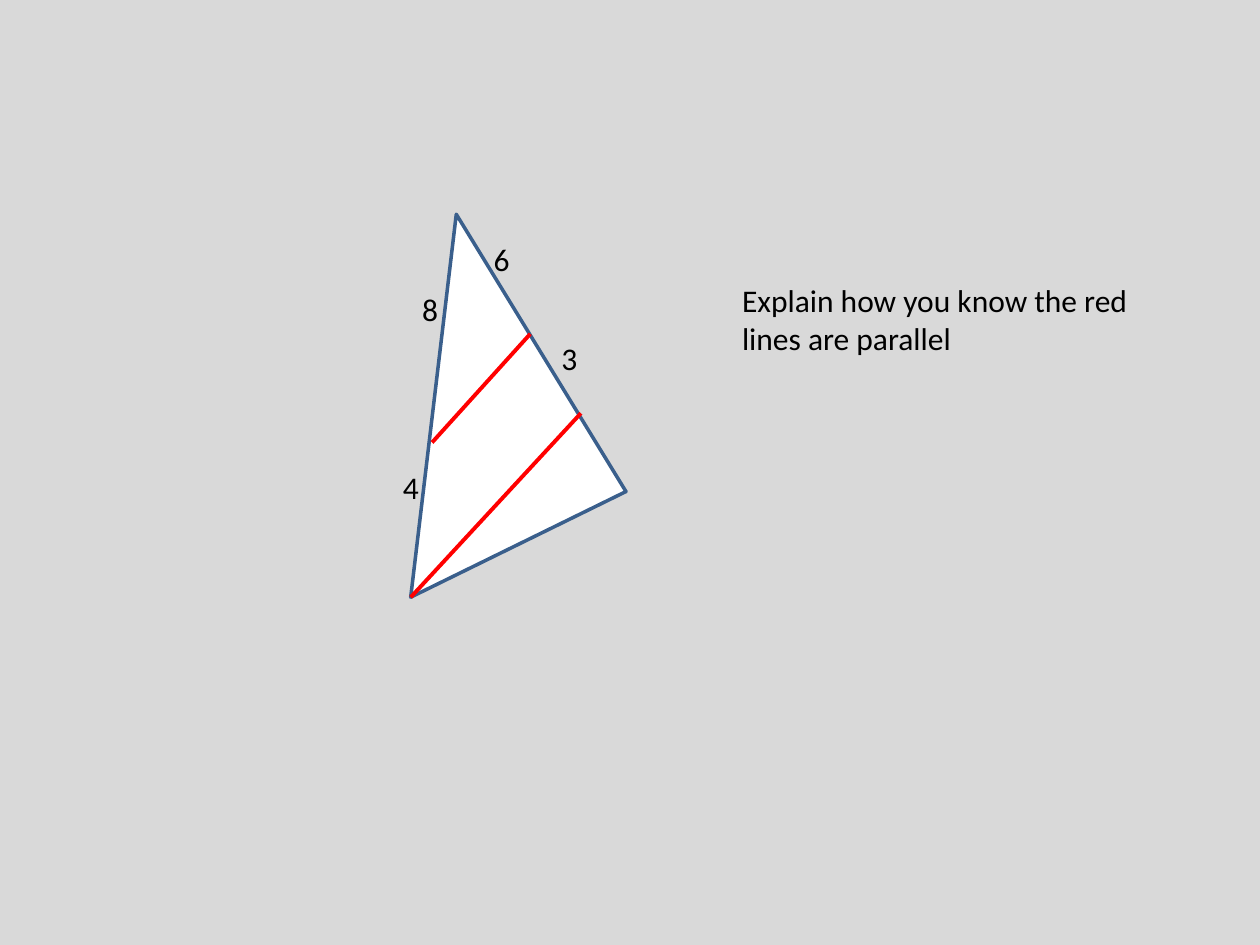
from dataclasses import dataclass

from lxml import etree
from pptx import Presentation
from pptx import util as u
from pptx.dml.color import RGBColor
from pptx.enum import text
from pptx.oxml.ns import qn

HUES = {"back": "D9D9D9", "fill": "FFFFFF", "edge": "3A5F8C",
        "red": "FF0000", "ink": "000000"}


@dataclass
class Point:
    x: float
    y: float


@dataclass
class Label:
    words: str
    x: float
    y: float
    w: float = 0.84
    h: float = 1.02
    wrap: bool = False


@dataclass
class Line:
    start: Point
    end: Point


def hue(name: str) -> RGBColor:
    return RGBColor.from_string(HUES[name])


def draw_shape(shapes, points: list[Point]) -> None:
    first, *rest = [(u.Cm(p.x), u.Cm(p.y)) for p in points]
    pen = shapes.build_freeform(*first)
    pen.add_line_segments(rest, close=True)
    shape = pen.convert_to_shape()
    shape.shadow.inherit = False
    shape.fill.solid()
    shape.fill.fore_color.rgb = hue("fill")
    shape.line.color.rgb = hue("edge")
    shape.line.width = u.Pt(2)


def draw_label(shapes, label: Label) -> None:
    box = shapes.add_textbox(u.Cm(label.x), u.Cm(label.y),
                             u.Cm(label.w), u.Cm(label.h))
    frame = box.text_frame
    frame.word_wrap = label.wrap
    frame.auto_size = text.MSO_AUTO_SIZE.SHAPE_TO_FIT_TEXT
    para = frame.paragraphs[0]
    para.text = label.words
    para.font.name = "Calibri"
    para.font.size = u.Pt(18)
    para.font.color.rgb = hue("ink")


def draw_line(shapes, line: Line) -> None:
    link = shapes.add_connector(1, u.Cm(line.start.x), u.Cm(line.start.y),
                                u.Cm(line.end.x), u.Cm(line.end.y))
    link.line.color.rgb = hue("red")
    link.line.width = u.Pt(2.25)
    etree.SubElement(link._element.spPr, qn("a:effectLst"))


# Corners of the triangle, side lengths and parallel lines
TOP, RIGHT, LEFT = Point(9.2, 4.32), Point(12.62, 9.91), Point(8.28, 12.04)
SIDES = [Label("8", 8.26, 5.72), Label("3", 11.07, 6.71),
         Label("6", 9.7, 4.72), Label("4", 7.87, 9.32)]
LINES = [Line(Point(8.71, 8.92), Point(10.69, 6.73)),
         Line(LEFT, Point(11.71, 8.33))]
TASK = Label("Explain how you know the red lines are parallel",
             14.71, 5.54, 9.4, 1.8, True)


def main() -> None:
    deck = Presentation()
    deck.slide_width, deck.slide_height = u.Cm(25.4), u.Cm(19.05)
    slide = deck.slides.add_slide(deck.slide_layouts[6])
    slide.background.fill.solid()
    slide.background.fill.fore_color.rgb = hue("back")

    # Figure
    group = slide.shapes.add_group_shape().shapes
    draw_shape(group, [TOP, RIGHT, LEFT])
    for side in SIDES:
        draw_label(group, side)
    for line in LINES:
        draw_line(group, line)

    # Question
    draw_label(slide.shapes, TASK)
    deck.save("out.pptx")


if __name__ == "__main__":
    main()
